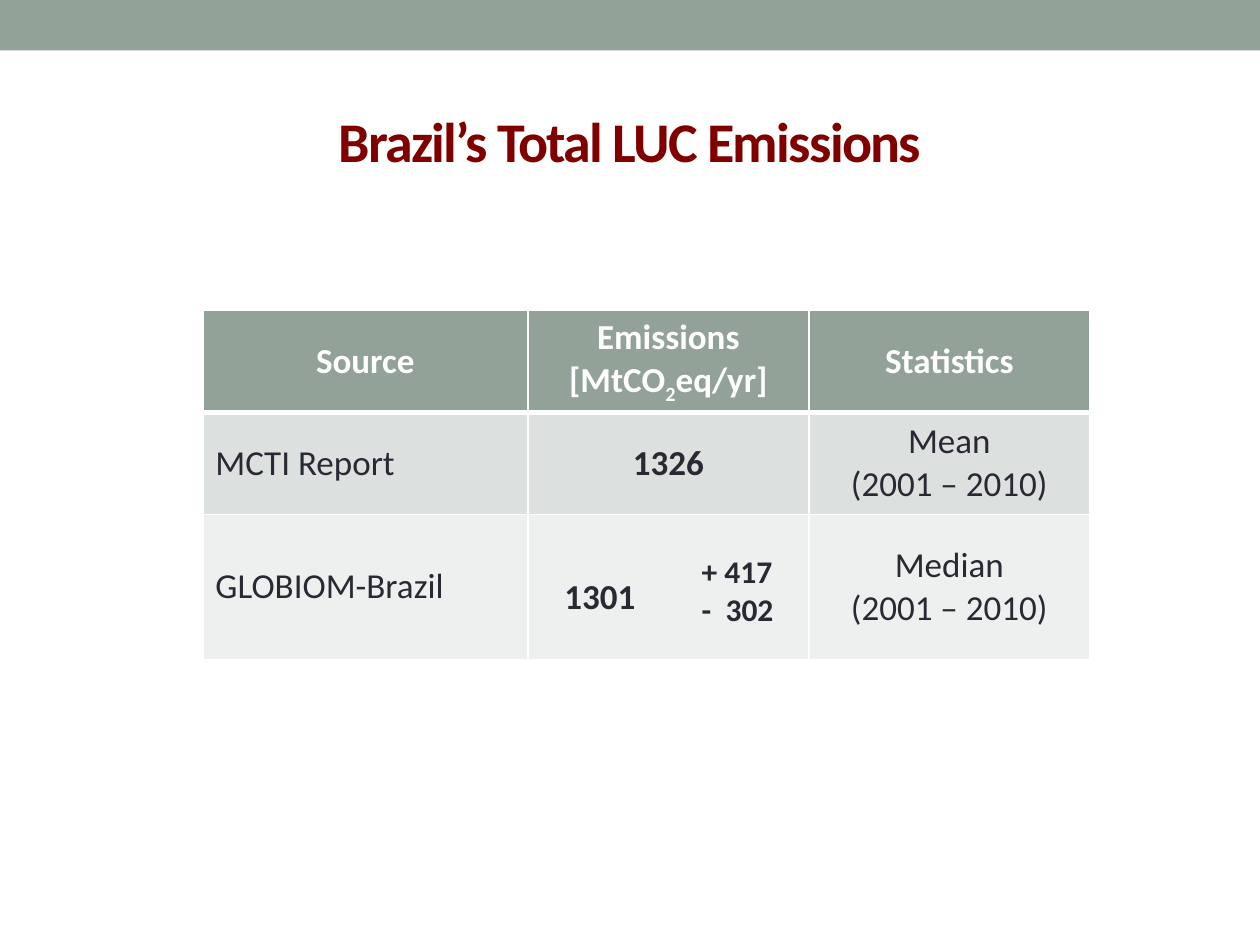
import pptx
import pptx.dml.color
import pptx.enum.shapes
import pptx.enum.text
import pptx.oxml
import pptx.oxml.ns
import pptx.util
from lxml import etree

Inches = pptx.util.Inches
RGBColor = pptx.dml.color.RGBColor
ALIGN = pptx.enum.text.PP_ALIGN
ANCHOR = pptx.enum.text.MSO_ANCHOR

SAGE = RGBColor(0x93, 0xA2, 0x99)
MAROON = RGBColor(0x80, 0x00, 0x00)
WHITE = RGBColor(0xFF, 0xFF, 0xFF)
INK = RGBColor(0x29, 0x29, 0x34)
ROW_FILLS = [SAGE, RGBColor(0xDC, 0xE0, 0xDE), RGBColor(0xEE, 0xF0, 0xEF)]

COLUMN_WIDTHS = [2.58, 2.23, 2.23]
ROW_HEIGHTS = [0.81, 0.81, 1.15]
PERIOD = "(2001 – 2010)"
ROWS = [
    [["Source"], ["Emissions [MtCO", "2", "eq/yr]"], ["Statistics"]],
    [["MCTI Report"], ["1326"], ["Mean\n" + PERIOD]],
    [["GLOBIOM-Brazil"], ["1301"], ["Median\n" + PERIOD]],
]


def set_values(target, values):
    for name, value in values.items():
        setattr(target, name, value)


def format_font(font, size, color, bold=True):
    set_values(font, {"name": "Calibri", "size": pptx.util.Pt(size), "bold": bold})
    font.color.rgb = color


def add_child(parent, tag, **attributes):
    return etree.SubElement(parent, pptx.oxml.ns.qn(tag), attributes)


def add_band(slide, left, top, width, height):
    band = slide.shapes.add_shape(
        pptx.enum.shapes.MSO_SHAPE.RECTANGLE, left, top, width, height)
    band.shadow.inherit = False
    band.fill.solid()
    band.fill.fore_color.rgb = SAGE
    band.line.fill.background()


def add_title(slide, left, top, width, height):
    frame = slide.shapes.add_textbox(left, top, width, height).text_frame
    set_values(frame, {"word_wrap": True, "vertical_anchor": ANCHOR.MIDDLE})
    paragraph = frame.paragraphs[0]
    paragraph.alignment = ALIGN.CENTER
    run = paragraph.add_run()
    run.text = "Brazil’s Total LUC Emissions"
    format_font(run.font, 32, MAROON)
    run.font._element.set("spc", "-100")


def add_borders(cell, bottom_width):
    properties = cell._tc.get_or_add_tcPr()
    for side, width in {"L": 1, "R": 1, "T": 1, "B": bottom_width}.items():
        line = add_child(properties, "a:ln" + side, w=str(pptx.util.Pt(width)))
        add_child(add_child(line, "a:solidFill"), "a:srgbClr", val=str(WHITE))


def fill_cell(cell, parts, row, column):
    header = row == 0
    add_borders(cell, 3 if header else 1)
    cell.fill.solid()
    cell.fill.fore_color.rgb = ROW_FILLS[row]
    cell.vertical_anchor = ANCHOR.MIDDLE
    frame = cell.text_frame
    frame.text = parts[0]
    for index, part in enumerate(parts[1:]):
        run = frame.paragraphs[0].add_run()
        run.text = part
        if index == 0:
            run.font._element.set("baseline", "-25000")
    for paragraph in frame.paragraphs:
        paragraph.alignment = ALIGN.CENTER if header or column else ALIGN.LEFT
        for run in paragraph.runs:
            format_font(run.font, 20, WHITE if header else INK, header or column == 1)


def add_emissions_table(slide, left, top, width, height):
    table = slide.shapes.add_table(
        len(ROWS), len(COLUMN_WIDTHS), left, top, width, height).table
    for column, column_width in zip(table.columns, COLUMN_WIDTHS):
        column.width = Inches(column_width)
    for row, row_height in zip(table.rows, ROW_HEIGHTS):
        row.height = Inches(row_height)
    for row, cells in enumerate(ROWS):
        for column, parts in enumerate(cells):
            fill_cell(table.cell(row, column), parts, row, column)
    median = table.cell(2, 1)
    median.margin_left = Inches(0.29)
    set_values(median.text_frame.paragraphs[0],
               {"alignment": ALIGN.LEFT, "line_spacing": 1.5})


def add_range(slide, left, top, width, height):
    frame = slide.shapes.add_textbox(left, top, width, height).text_frame
    frame.word_wrap = False
    frame.text = "+ 417\n-\t302"
    for paragraph in frame.paragraphs:
        tabs = add_child(paragraph._p.get_or_add_pPr(), "a:tabLst")
        add_child(tabs, "a:tab", pos=str(Inches(0.19)), algn="l")
        for run in paragraph.runs:
            format_font(run.font, 18, INK)


def main():
    presentation = pptx.Presentation()
    set_values(presentation, {"slide_width": Inches(10), "slide_height": Inches(7.5)})
    slide = presentation.slides.add_slide(presentation.slide_layouts[6])
    add_band(slide, Inches(0), Inches(0), Inches(10), Inches(0.4))
    add_title(slide, Inches(0.5), Inches(0.57), Inches(9), Inches(1.08))
    add_emissions_table(slide, Inches(1.61), Inches(2.46),
                        Inches(sum(COLUMN_WIDTHS)), Inches(sum(ROW_HEIGHTS)))
    add_range(slide, Inches(5.47), Inches(4.33), Inches(0.78), Inches(0.71))
    presentation.save("out.pptx")


if __name__ == "__main__":
    main()
